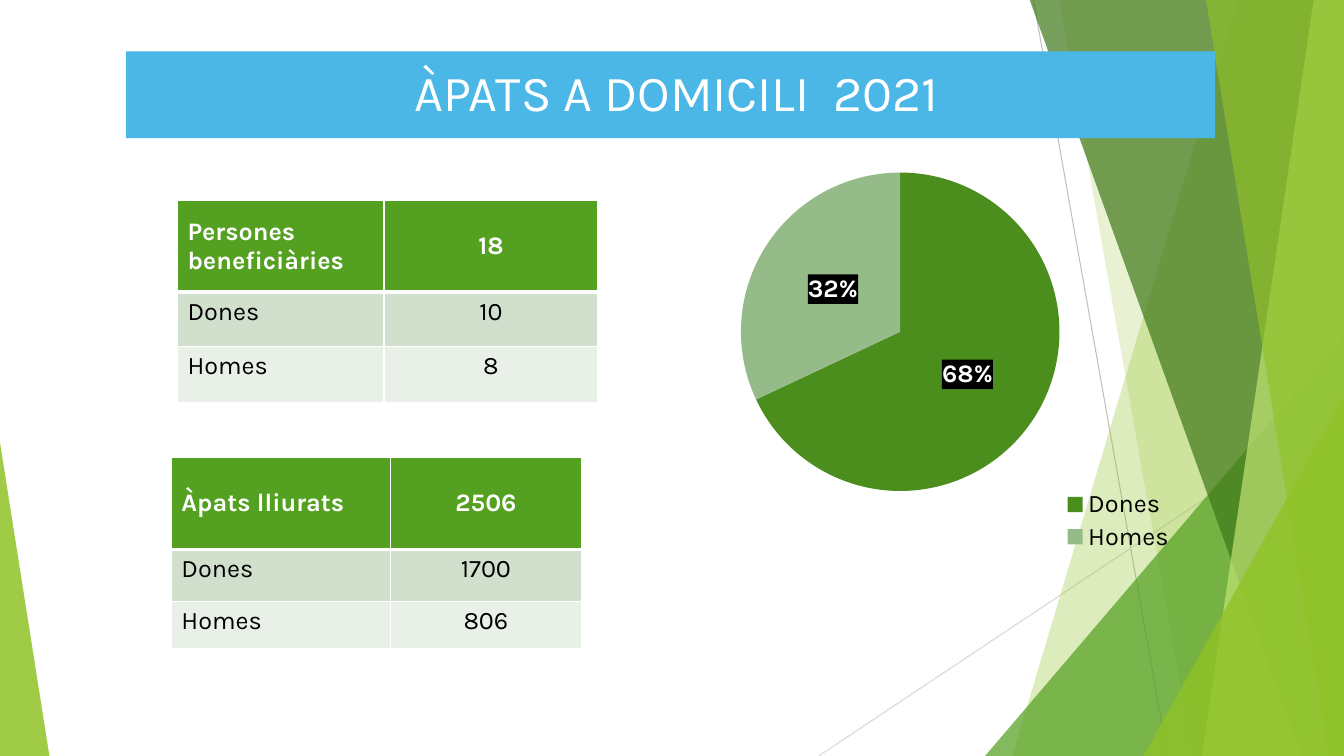
from dataclasses import dataclass

from lxml import etree
from pptx import Presentation
from pptx.chart import data as chart_data
from pptx.dml.color import RGBColor
from pptx.enum import chart as chart_enum, shapes, text
from pptx.oxml import ns, parse_xml
from pptx.util import Inches, Pt


@dataclass(frozen=True)
class Theme:
    font: str = "Karla"
    title_size: int = 36
    body_size: int = 18
    white: str = "FFFFFF"
    black: str = "000000"
    banner: str = "4BB7E7"
    lime: str = "90C226"
    pale_lime: str = "C0E474"
    green: str = "54A021"
    forest: str = "3F7819"
    bands: tuple = ("D1DFCD", "E9F0E8")
    slices: tuple = ("4B8E1D", "95BC88")
    rays: tuple = ("BFBFBF", "D9D9D9")


def rgb(value):
    return RGBColor.from_string(value)


class SlideBuilder:
    def __init__(self, slide, theme):
        self.slide = slide
        self.theme = theme

    def style_font(self, font, size, color, bold=False):
        font.name = self.theme.font
        font.size = Pt(size)
        font.bold = bold
        font.color.rgb = rgb(color)

    def paint(self, shape, color, opacity):
        shape.shadow.inherit = False
        shape.line.fill.background()
        shape.fill.solid()
        shape.fill.fore_color.rgb = rgb(color)
        tint = shape.fill._xPr.find(".//" + ns.qn("a:srgbClr"))
        etree.SubElement(tint, ns.qn("a:alpha"), val=str(opacity * 1000))

    def ray(self, start, end, color):
        line = self.slide.shapes.add_connector(
            shapes.MSO_CONNECTOR.STRAIGHT, *map(Inches, start + end))
        line.line.color.rgb = rgb(color)
        line.line.width = Pt(0.75)
        etree.SubElement(line._element.spPr, ns.qn("a:effectLst"))

    def shard(self, top_left, top_right, bottom_left, color, opacity):
        """Draw a full-height band that ends at the right edge of the slide."""
        top, bottom, right = -0.01, 7.5, 13.33
        corners = [(top_right, top), (right, bottom), (bottom_left, bottom)]
        outline = self.slide.shapes.build_freeform(Inches(top_left), Inches(top))
        outline.add_line_segments([(Inches(x), Inches(y)) for x, y in corners])
        self.paint(outline.convert_to_shape(), color, opacity)

    def triangle(self, box, apex, color, opacity):
        corner = self.slide.shapes.add_shape(
            shapes.MSO_SHAPE.ISOSCELES_TRIANGLE, *map(Inches, box))
        corner.adjustments[0] = apex
        self.paint(corner, color, opacity)

    def title(self, wording, box):
        banner = self.slide.shapes.title
        # The banner lies in front of the backdrop.
        self.slide.shapes._spTree.append(banner._element)
        banner.left, banner.top, banner.width, banner.height = map(Inches, box)
        banner.fill.solid()
        banner.fill.fore_color.rgb = rgb(self.theme.banner)
        frame = banner.text_frame
        frame.text = wording
        frame.auto_size = text.MSO_AUTO_SIZE.NONE
        frame.vertical_anchor = text.MSO_ANCHOR.MIDDLE
        line = frame.paragraphs[0]
        line.alignment = text.PP_ALIGN.CENTER
        line.line_spacing = 0.9
        self.style_font(line.runs[0].font, self.theme.title_size, self.theme.white)

    def cell_borders(self, cell, widths):
        """Set white borders; widths maps L, R, T and B to points."""
        for side in "LRTB":
            cell._tc.get_or_add_tcPr().append(parse_xml(
                f'<a:ln{side} {ns.nsdecls("a")} w="{Pt(widths[side])}"><a:solidFill>'
                f'<a:srgbClr val="{self.theme.white}"/></a:solidFill></a:ln{side}>'))

    def table(self, rows, origin, widths, heights):
        theme = self.theme
        grid = self.slide.shapes.add_table(
            len(rows), len(widths),
            *map(Inches, (*origin, sum(widths), sum(heights)))).table
        for column, width in zip(grid.columns, widths):
            column.width = Inches(width)
        for r, (row, height) in enumerate(zip(rows, heights)):
            grid.rows[r].height = Inches(height)
            for c, wording in enumerate(row):
                cell = grid.cell(r, c)
                self.cell_borders(cell, {"L": 1, "R": 1, "T": 3 if r == 1 else 1,
                                         "B": 3 if r == 0 else 1})
                cell.fill.solid()
                cell.fill.fore_color.rgb = rgb((theme.green, *theme.bands)[r])
                cell.text_frame.text = wording
                if r == 0:
                    cell.vertical_anchor = text.MSO_ANCHOR.MIDDLE
                line = cell.text_frame.paragraphs[0]
                if c == 1:
                    line.alignment = text.PP_ALIGN.CENTER
                self.style_font(line.runs[0].font, theme.body_size,
                                theme.white if r == 0 else theme.black, r == 0)

    def chart_layout(self, x, y, w, h, target=""):
        return parse_xml(
            f'<c:layout {ns.nsdecls("c")}><c:manualLayout>{target}'
            '<c:xMode val="edge"/><c:yMode val="edge"/>'
            f'<c:x val="{x}"/><c:y val="{y}"/><c:w val="{w}"/><c:h val="{h}"/>'
            '</c:manualLayout></c:layout>')

    def pie(self, shares, box):
        theme = self.theme
        figures = chart_data.CategoryChartData(number_format="0")
        figures.categories = list(shares)
        figures.add_series("Series 1", list(shares.values()))
        chart = self.slide.shapes.add_chart(
            chart_enum.XL_CHART_TYPE.PIE, *map(Inches, box), figures).chart
        chart.has_title = False
        self.style_font(chart.font, theme.body_size, theme.black)

        plot = chart.plots[0]
        plot.vary_by_categories = True
        for i, color in enumerate(theme.slices):
            piece = plot.series[0].points[i].format
            piece.fill.solid()
            piece.fill.fore_color.rgb = rgb(color)
            piece.line.fill.background()

        labels = plot.series[0].data_labels
        labels.show_value = False
        labels.show_percentage = True
        labels.number_format = "0%"
        labels.number_format_is_linked = False
        labels.position = chart_enum.XL_LABEL_POSITION.CENTER
        self.style_font(labels.font, theme.body_size, theme.white, True)
        labels._element.find(ns.qn("c:txPr")).addprevious(parse_xml(
            f'<c:spPr {ns.nsdecls("c", "a")}><a:solidFill>'
            f'<a:srgbClr val="{theme.black}"/></a:solidFill></c:spPr>'))

        chart.has_legend = True
        legend = chart.legend
        legend.position = chart_enum.XL_LEGEND_POSITION.RIGHT
        legend.include_in_layout = False
        self.style_font(legend.font, theme.body_size, theme.black)
        legend._element.find(ns.qn("c:legendPos")).addnext(
            self.chart_layout(0.78, 0.85, 0.22, 0.15))

        area = chart._chartSpace.chart.plotArea
        for automatic in area.findall(ns.qn("c:layout")):
            area.remove(automatic)
        area.insert(0, self.chart_layout(
            0.16, 0.15, 0.61, 0.71, '<c:layoutTarget val="inner"/>'))


def draw_backdrop(page, theme):
    page.ray((10.25, 0), (11.58, 7.5), theme.rays[0])
    page.ray((13.33, 4.03), (8.12, 7.5), theme.rays[1])
    page.shard(12.28, 13.33, 10.04, theme.lime, 30)
    page.shard(10.5, 13.33, 11.83, theme.lime, 20)
    page.triangle((9.77, 3.33, 3.56, 4.17), 1, theme.green, 72)
    page.shard(10.21, 13.33, 12.91, theme.forest, 70)
    page.shard(13.03, 13.33, 11.92, theme.pale_lime, 70)
    page.shard(11.96, 13.33, 13.18, theme.lime, 65)
    page.triangle((11.34, 3.93, 1.99, 3.57), 1, theme.lime, 80)
    page.triangle((0, 4.39, 0.49, 3.11), 0, theme.lime, 85)


def main():
    deck = Presentation()
    deck.slide_width, deck.slide_height = Inches(13.33), Inches(7.5)
    theme = Theme()
    page = SlideBuilder(deck.slides.add_slide(deck.slide_layouts[5]), theme)
    draw_backdrop(page, theme)
    page.title(" ÀPATS A DOMICILI  2021", (1.25, 0.51, 10.8, 0.86))
    page.table([("Persones beneficiàries", "18"), ("Dones", "10"), ("Homes", "8")],
               (1.76, 1.99), (2.05, 2.12), (0.91, 0.54, 0.55))
    page.table([("Àpats lliurats", "2506"), ("Dones", "1700"), ("Homes", "806")],
               (1.7, 4.54), (2.17, 1.9), (0.91, 0.52, 0.46))
    page.pie({"Dones": 68, "Homes": 32}, (6.52, 1.04, 5.18, 4.46))
    deck.save("out.pptx")


if __name__ == "__main__":
    main()
